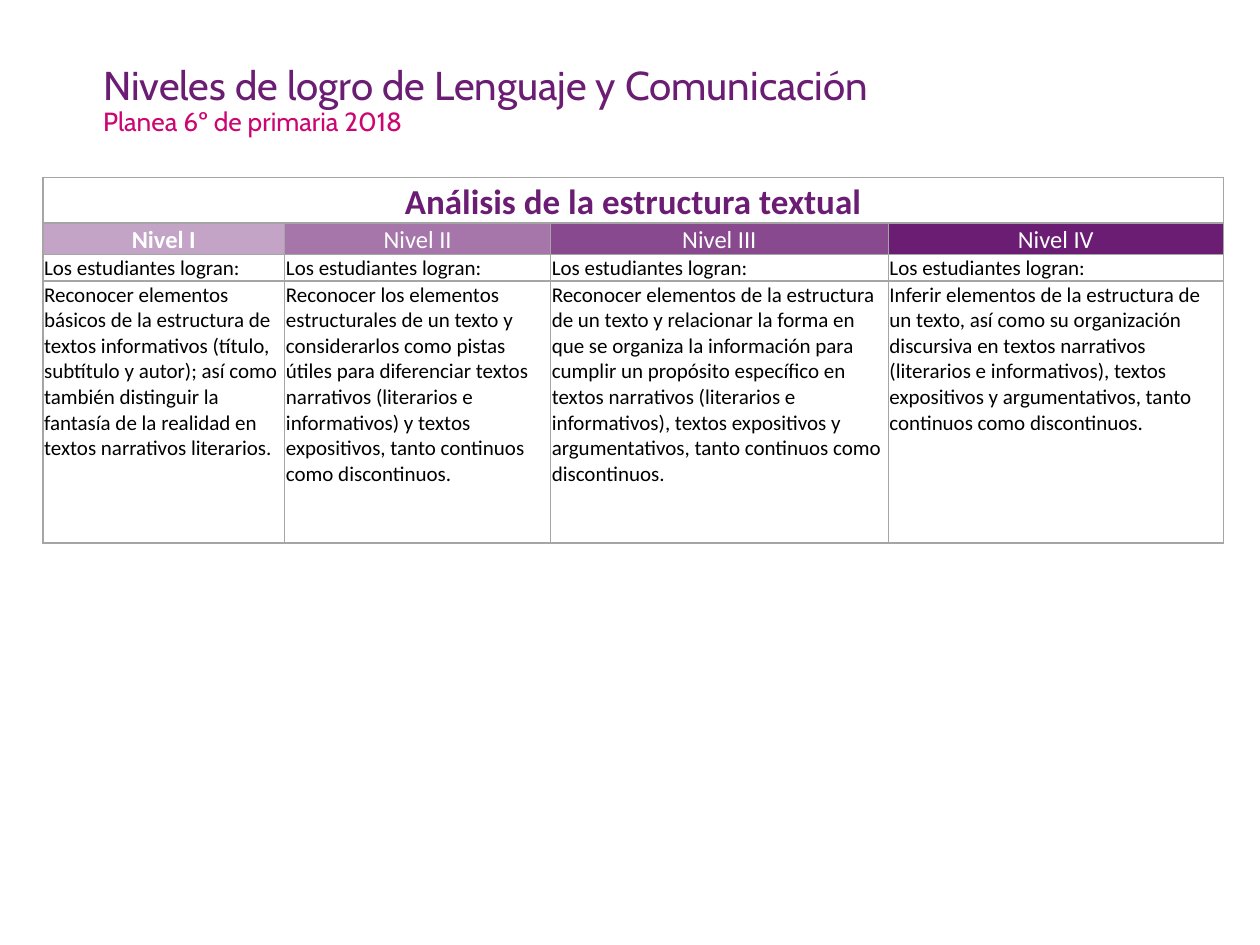
from lxml.etree import SubElement
from pptx import Presentation
from pptx.dml.color import RGBColor
from pptx.enum.text import MSO_ANCHOR, PP_ALIGN
from pptx.oxml.ns import qn
from pptx.util import Inches, Pt

COLORS = {
    "purple": "6B1C73",
    "magenta": "CC0671",
    "border": "A5A5A5",
    "white": "FFFFFF",
    "black": "000000",
}
GRID_COLS, GRID_ROWS = 100, 75

LEVELS = [
    ("Nivel I", 40,
     "Reconocer elementos básicos de la estructura de textos informativos "
     "(título, subtítulo y autor); así como también distinguir la fantasía "
     "de la realidad en textos narrativos literarios."),
    ("Nivel II", 60,
     "Reconocer los elementos estructurales de un texto y considerarlos como "
     "pistas útiles para diferenciar textos narrativos (literarios e "
     "informativos) y textos expositivos, tanto continuos como discontinuos."),
    ("Nivel III", 80,
     "Reconocer elementos de la estructura de un texto y relacionar la forma "
     "en que se organiza la información para cumplir un propósito específico "
     "en textos narrativos (literarios e informativos), textos expositivos y "
     "argumentativos, tanto continuos como discontinuos."),
    ("Nivel IV", 100,
     "Inferir elementos de la estructura de un texto, así como su organización "
     "discursiva en textos narrativos (literarios e informativos), textos "
     "expositivos y argumentativos, tanto continuos como discontinuos."),
]


class SlideBuilder:
    heading_font = "Cabin"
    body_font = "Calibri"

    def __init__(self, prs):
        self.s = prs.slides.add_slide(prs.slide_layouts[6])
        self.col = prs.slide_width / GRID_COLS
        self.row = prs.slide_height / GRID_ROWS

    def box(self, x, y, w, h):
        return (round(x * self.col), round(y * self.row),
                round(w * self.col), round(h * self.row))

    def add_text(self, tf, text, font, size, color, bold=False,
                 align=PP_ALIGN.LEFT, spacing=1.0):
        p = tf.paragraphs[0]
        p.alignment = align
        p.line_spacing = spacing
        r = p.add_run()
        r.text = text
        r.font.name = font
        r.font.size = Pt(size)
        r.font.bold = bold
        r.font.color.rgb = RGBColor.from_string(COLORS[color])

    def heading(self, text, box, size, color, spacing, anchor):
        tf = self.s.shapes.add_textbox(*self.box(*box)).text_frame
        tf.word_wrap = True
        tf.vertical_anchor = anchor
        self.add_text(tf, text, self.heading_font, size, color,
                      spacing=spacing)

    def table(self, x, y, widths, heights):
        box = self.box(x, y, sum(widths), sum(heights))
        table = self.s.shapes.add_table(len(heights), len(widths), *box).table
        table.first_row = table.horz_banding = False
        for column, width in zip(table.columns, widths):
            column.width = round(width * self.col)
        for row, height in zip(table.rows, heights):
            row.height = round(height * self.row)
        for cell in table.iter_cells():
            self.borders(cell)
            self.fill(cell, "white")
        return table

    def borders(self, cell):
        props = cell._tc.get_or_add_tcPr()
        for side in ("a:lnL", "a:lnR", "a:lnT", "a:lnB"):
            line = SubElement(props, qn(side), w=str(Pt(1)))
            fill = SubElement(line, qn("a:solidFill"))
            SubElement(fill, qn("a:srgbClr"), val=COLORS["border"])

    def fill(self, cell, color, opacity=100):
        cell.fill.solid()
        cell.fill.fore_color.rgb = RGBColor.from_string(COLORS[color])
        if opacity < 100:
            clr = cell._tc.tcPr.find(qn("a:solidFill")).find(qn("a:srgbClr"))
            SubElement(clr, qn("a:alpha"), val=str(opacity * 1000))

    def header_cell(self, cell, text, size, color, bold):
        cell.margin_left = cell.margin_right = Inches(0.05)
        cell.margin_top = cell.margin_bottom = 0
        self.add_text(cell.text_frame, text, self.body_font, size, color, bold,
                      PP_ALIGN.CENTER, 1.07)

    def body_cell(self, cell, text):
        cell.margin_left = cell.margin_right = cell.margin_top = Inches(0.01)
        cell.margin_bottom = 0
        self.add_text(cell.text_frame, text, self.body_font, 12, "black")


def main():
    prs = Presentation()
    prs.slide_width, prs.slide_height = Inches(10), Inches(7.5)
    slide = SlideBuilder(prs)

    slide.heading("Niveles de logro de Lenguaje y Comunicación",
                  (7.2, 4.3, 86.2, 5.3), 23, "purple", 0.9, MSO_ANCHOR.MIDDLE)
    slide.heading("Planea 6º de primaria 2018",
                  (7.2, 7.4, 86.2, 8.6), 15, "magenta", 1.2, MSO_ANCHOR.TOP)

    table = slide.table(3.4, 14.1, [19.2, 21.1, 26.8, 26.6],
                        [3.6, 2.5, 2.1, 20.8])
    title = table.cell(0, 0)
    title.merge(table.cell(0, len(LEVELS) - 1))
    slide.header_cell(title, "Análisis de la estructura textual", 20,
                      "purple", True)
    for i, (name, opacity, skills) in enumerate(LEVELS):
        level = table.cell(1, i)
        slide.fill(level, "purple", opacity)
        slide.header_cell(level, name, 14, "white", i == 0)
        slide.body_cell(table.cell(2, i), "Los estudiantes logran:")
        slide.body_cell(table.cell(3, i), skills)

    prs.save("out.pptx")


if __name__ == "__main__":
    main()
